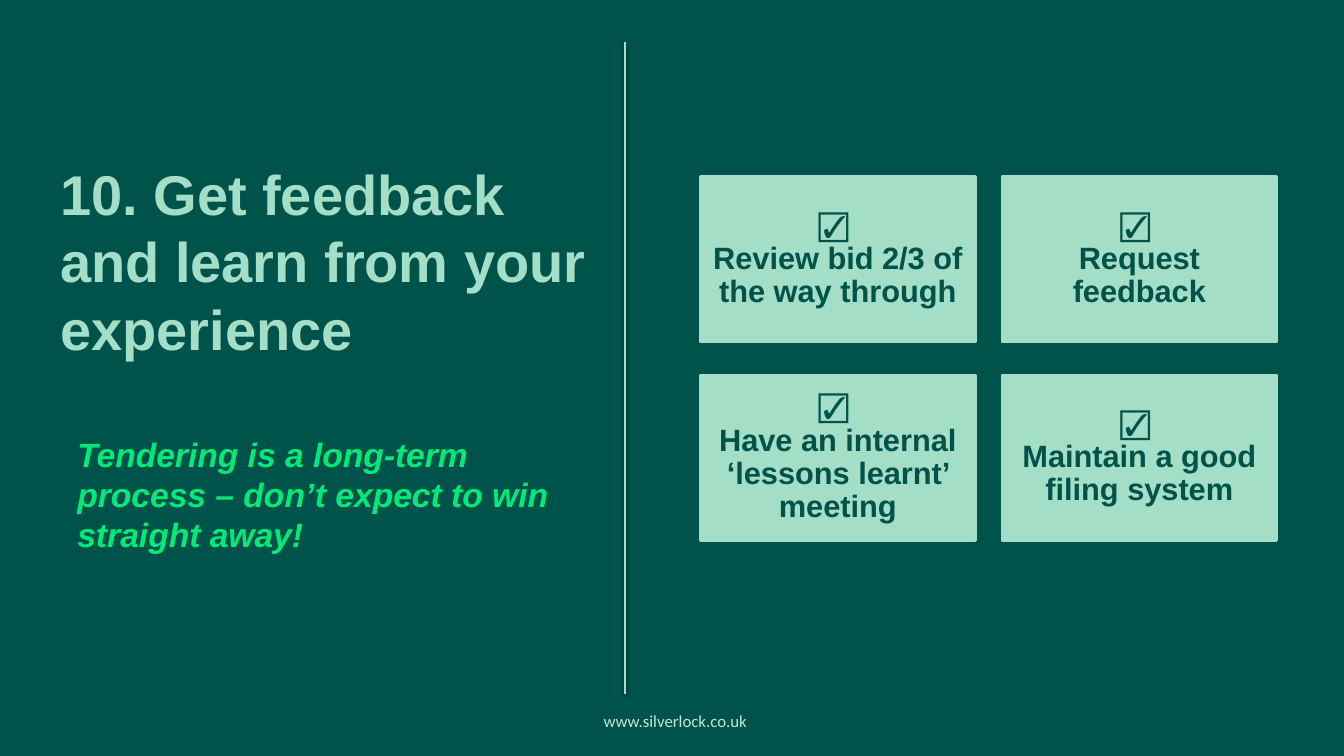
"""Build the slide on getting feedback and learning from experience."""
from dataclasses import dataclass

from lxml import etree
from pptx import Presentation
from pptx.dml.color import RGBColor
from pptx.enum import shapes, text
from pptx.oxml import ns
from pptx.util import Cm, Pt

DARK = "00534B"
MINT = "A4DEC7"
CARD_LEFT, CARD_TOP = 17.65, 4.45
CARD_WIDTH, CARD_HEIGHT = 6.93, 4.17
COLUMN_STEP, ROW_STEP = 7.6, 5.0
CARD_INSET = Cm(0.18)


@dataclass
class Label:
    words: str
    left: float
    top: float
    width: float
    height: float
    size: float
    color: str
    font: str = "Arial"
    bold: bool = True
    italic: bool = False
    align: text.PP_ALIGN = text.PP_ALIGN.LEFT
    anchor: text.MSO_ANCHOR = text.MSO_ANCHOR.TOP


@dataclass
class Card:
    words: str
    column: int
    row: int


LABELS = [
    Label("www.silverlock.co.uk", 13.02, 17.65, 8, 1.02, 12, "C0E7D7", font="Calibri",
          bold=False, align=text.PP_ALIGN.CENTER, anchor=text.MSO_ANCHOR.MIDDLE),
    Label("10. Get feedback and learn from your experience", 1.27, 6.05, 14.48, 3.18,
          40, MINT, anchor=text.MSO_ANCHOR.BOTTOM),
    Label("Tendering is a long-term process – don’t expect to win straight away!",
          1.7, 10.8, 12.6, 3.33, 24, "00EA78", italic=True),
]
CARDS = [
    Card("Review bid 2/3 of the way through", 0, 0),
    Card("Request feedback", 1, 0),
    Card("Have an internal ‘lessons learnt’ meeting", 0, 1),
    Card("Maintain a good filing system", 1, 1),
]


def paint(color_format, value: str) -> None:
    color_format.rgb = RGBColor.from_string(value)


def style(paragraph, size: float, color: str, font: str, bold: bool, italic: bool = False) -> None:
    for run in paragraph.runs:
        run.font.size = Pt(size)
        run.font.name = font
        run.font.bold = bold
        run.font.italic = italic
        paint(run.font.color, color)


def draw_label(slide, label: Label) -> None:
    box = slide.shapes.add_textbox(Cm(label.left), Cm(label.top), Cm(label.width), Cm(label.height))
    frame = box.text_frame
    frame.word_wrap = True
    frame.vertical_anchor = label.anchor
    frame.text = label.words
    paragraph = frame.paragraphs[0]
    paragraph.alignment = label.align
    style(paragraph, label.size, label.color, label.font, label.bold, label.italic)


def draw_card(slide, card: Card) -> None:
    panel = slide.shapes.add_shape(
        shapes.MSO_SHAPE.RECTANGLE,
        Cm(CARD_LEFT + card.column * COLUMN_STEP), Cm(CARD_TOP + card.row * ROW_STEP),
        Cm(CARD_WIDTH), Cm(CARD_HEIGHT))
    panel.shadow.inherit = False
    panel.fill.solid()
    paint(panel.fill.fore_color, MINT)
    paint(panel.line.color, MINT)
    panel.line.width = Pt(2)
    frame = panel.text_frame
    frame.word_wrap = True
    frame.vertical_anchor = text.MSO_ANCHOR.MIDDLE
    frame.margin_left = frame.margin_right = CARD_INSET
    frame.margin_top = frame.margin_bottom = CARD_INSET
    frame.text = "☑ \n" + card.words
    for paragraph, bold in zip(frame.paragraphs, (False, True)):
        paragraph.alignment = text.PP_ALIGN.CENTER
        paragraph.line_spacing = 0.9
        style(paragraph, 22, DARK, "Arial", bold)


def draw_divider(slide) -> None:
    divider = slide.shapes.add_connector(
        shapes.MSO_CONNECTOR.STRAIGHT, Cm(15.75), Cm(17.48), Cm(15.75), Cm(1.07))
    paint(divider.line.color, MINT)
    divider.line.width = Pt(2)
    effects = etree.SubElement(divider.element.spPr, ns.qn("a:effectLst"))
    shadow = etree.SubElement(effects, ns.qn("a:outerShdw"), blurRad=str(Pt(3.1)),
                              dist=str(Pt(1.6)), dir="5400000", rotWithShape="0")
    black = etree.SubElement(shadow, ns.qn("a:srgbClr"), val="000000")
    etree.SubElement(black, ns.qn("a:alpha"), val="38000")


def main() -> None:
    deck = Presentation()
    deck.slide_width, deck.slide_height = Cm(33.87), Cm(19.05)
    slide = deck.slides.add_slide(deck.slide_layouts[6])
    slide.background.fill.solid()
    paint(slide.background.fill.fore_color, DARK)
    for label in LABELS:
        draw_label(slide, label)
    draw_divider(slide)
    for card in CARDS:
        draw_card(slide, card)
    deck.save("out.pptx")


if __name__ == "__main__":
    main()
